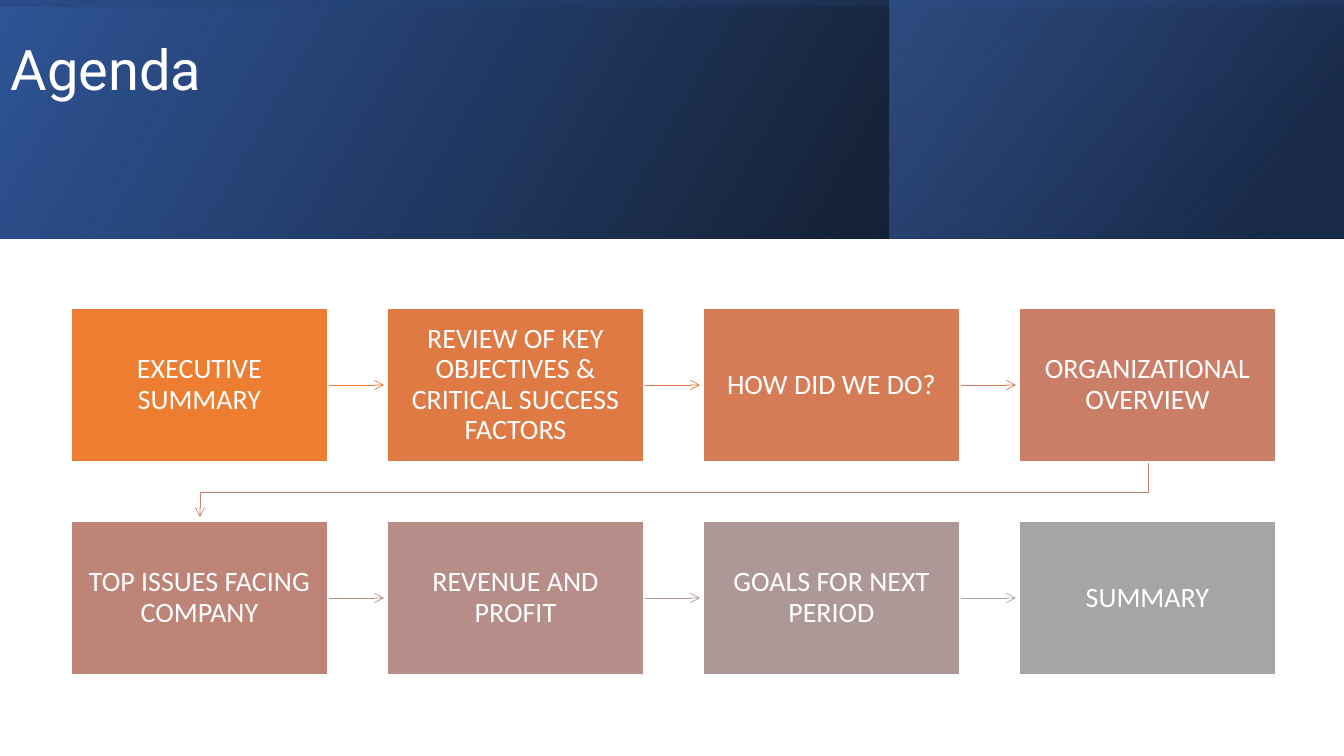
from lxml import etree
from pptx import Presentation
from pptx.dml.color import RGBColor
from pptx.enum.shapes import MSO_CONNECTOR, MSO_SHAPE
from pptx.enum.text import MSO_ANCHOR, PP_ALIGN
from pptx.oxml import parse_xml
from pptx.oxml.ns import nsdecls, qn
from pptx.util import Pt

PX = 9071.43  # EMU per px at 100.8 px to the inch
SLIDE_W, SLIDE_H = 1344, 756

WHITE = RGBColor(0xFF, 0xFF, 0xFF)
BLACK = RGBColor(0x00, 0x00, 0x00)
BLUE = RGBColor(0x2F, 0x55, 0x97)
NAVY = RGBColor(0x20, 0x38, 0x64)
SKY = RGBColor(0x44, 0x72, 0xC4)

# Topic, box colour, colour of the arrow that leaves the box
AGENDA = [
    ("EXECUTIVE SUMMARY", RGBColor(0xED, 0x7D, 0x31), RGBColor(0xED, 0x7D, 0x31)),
    ("REVIEW OF KEY OBJECTIVES & CRITICAL SUCCESS FACTORS",
     RGBColor(0xE0, 0x7A, 0x44), RGBColor(0xDE, 0x7A, 0x47)),
    ("HOW DID WE DO?", RGBColor(0xD5, 0x7B, 0x56), RGBColor(0xD1, 0x7B, 0x5C)),
    ("ORGANIZATIONAL OVERVIEW", RGBColor(0xCA, 0x7E, 0x67), RGBColor(0xC4, 0x81, 0x70)),
    ("TOP ISSUES FACING COMPANY", RGBColor(0xBF, 0x84, 0x78), RGBColor(0xB9, 0x8A, 0x82)),
    ("REVENUE AND PROFIT", RGBColor(0xB6, 0x8D, 0x88), RGBColor(0xAE, 0x96, 0x94)),
    ("GOALS FOR NEXT PERIOD", RGBColor(0xAD, 0x98, 0x97), RGBColor(0xA5, 0xA5, 0xA5)),
    ("SUMMARY", RGBColor(0xA5, 0xA5, 0xA5), None),
]
COLUMNS = 4
TOPIC_W, TOPIC_H = 257, 154
ARROW_LENGTH = 55


def px(*lengths):
    return [round(length * PX) for length in lengths]


def style_text(frame, text, font, size, insets):
    frame.text = text
    frame.word_wrap = True
    frame.vertical_anchor = MSO_ANCHOR.MIDDLE
    frame.margin_left, frame.margin_top = px(*insets)
    frame.margin_right, frame.margin_bottom = px(*insets)
    paragraph = frame.paragraphs[0]
    paragraph.line_spacing = 0.9
    run_font = paragraph.runs[0].font
    run_font.name, run_font.size, run_font.color.rgb = font, Pt(size), WHITE
    return paragraph


def add_gradient_panel(slide, box, angle, stops, rotation=0):
    """stops: (position %, colour, opacity %); the panel is mirrored."""
    panel = slide.shapes.add_shape(MSO_SHAPE.RECTANGLE, *px(*box))
    panel.shadow.inherit = False
    panel.line.fill.background()
    panel.rotation = rotation
    panel.fill.background()
    properties = panel._element.spPr
    properties.find(qn("a:xfrm")).set("flipH", "1")
    stop_xml = "".join(
        f'<a:gs pos="{position * 1000}"><a:srgbClr val="{colour}">'
        f'<a:alpha val="{opacity * 1000}"/></a:srgbClr></a:gs>'
        for position, colour, opacity in stops)
    gradient = parse_xml(
        f'<a:gradFill {nsdecls("a")} rotWithShape="1"><a:gsLst>{stop_xml}</a:gsLst>'
        f'<a:lin ang="{angle * 60000}" scaled="0"/></a:gradFill>')
    properties.replace(properties.find(qn("a:noFill")), gradient)


def add_banner(slide, left, top, width, height):
    # Base, right-hand accent and a sheen turned on its side
    add_gradient_panel(slide, (left, top, width, height), 330,
                       [(0, BLACK, 96), (100, BLUE, 100)])
    accent_left = left + 890
    add_gradient_panel(slide, (accent_left, top, left + width - accent_left - 1, height), 320,
                       [(19, NAVY, 68), (100, SKY, 48)])
    offset = (width - height) / 2
    add_gradient_panel(slide, (left + offset, top - offset, height, width), 350,
                       [(23, BLUE, 16), (99, BLACK, 45)], rotation=270)
    # Title
    title = slide.shapes.add_textbox(*px(left + 1, top, 1072, 144))
    style_text(title.text_frame, "Agenda", "Roboto", 40, (10, 5))


def style_arrow(arrow, colour):
    arrow.line.color.rgb = colour
    arrow.line.width = Pt(0.5)
    etree.SubElement(arrow.line._get_or_add_ln(), qn("a:tailEnd"), type="arrow")


def add_topic(slide, left, top, text, colour):
    topic = slide.shapes.add_shape(MSO_SHAPE.RECTANGLE, *px(left, top, TOPIC_W, TOPIC_H))
    topic.shadow.inherit = False
    topic.fill.solid()
    topic.fill.fore_color.rgb = colour
    topic.line.color.rgb = WHITE
    topic.line.width = Pt(1)
    paragraph = style_text(topic.text_frame, text, "Calibri", 20, (12, 13))
    paragraph.alignment = PP_ALIGN.CENTER


def add_step_arrow(slide, left, middle, colour):
    arrow = slide.shapes.add_connector(
        MSO_CONNECTOR.STRAIGHT, *px(left, middle, left + ARROW_LENGTH, middle))
    etree.SubElement(arrow._element.spPr, qn("a:effectLst"))
    style_arrow(arrow, colour)


def add_return_arrow(slide, start, end, colour):
    (start_x, start_y), (end_x, end_y) = start, end
    bend_y = start_y + 30
    outline = slide.shapes.build_freeform(start_x, start_y, scale=PX)
    outline.add_line_segments([(start_x, bend_y), (end_x, bend_y), end], close=False)
    arrow = outline.convert_to_shape()
    arrow.shadow.inherit = False
    arrow.fill.background()
    style_arrow(arrow, colour)


def add_agenda(slide, left, top, width, height):
    column_step = (width - TOPIC_W) / (COLUMNS - 1)
    row_step = height - TOPIC_H
    for index, (text, colour, arrow_colour) in enumerate(AGENDA):
        row, column = divmod(index, COLUMNS)
        x, y = left + column * column_step, top + row * row_step
        # Arrow to the next topic
        if column < COLUMNS - 1:
            add_step_arrow(slide, x + TOPIC_W + 1, y + TOPIC_H / 2, arrow_colour)
        elif arrow_colour:
            add_return_arrow(slide, (x + TOPIC_W / 2, y + TOPIC_H),
                             (left + TOPIC_W / 2, y + row_step - 4), arrow_colour)
        add_topic(slide, x, y, text, colour)


def main():
    presentation = Presentation()
    presentation.slide_width, presentation.slide_height = px(SLIDE_W, SLIDE_H)
    slide = presentation.slides.add_slide(presentation.slide_layouts[6])
    add_banner(slide, 0, 0, SLIDE_W, 239)
    add_agenda(slide, 71, 308, 1205, 367)
    presentation.save("out.pptx")


if __name__ == "__main__":
    main()
